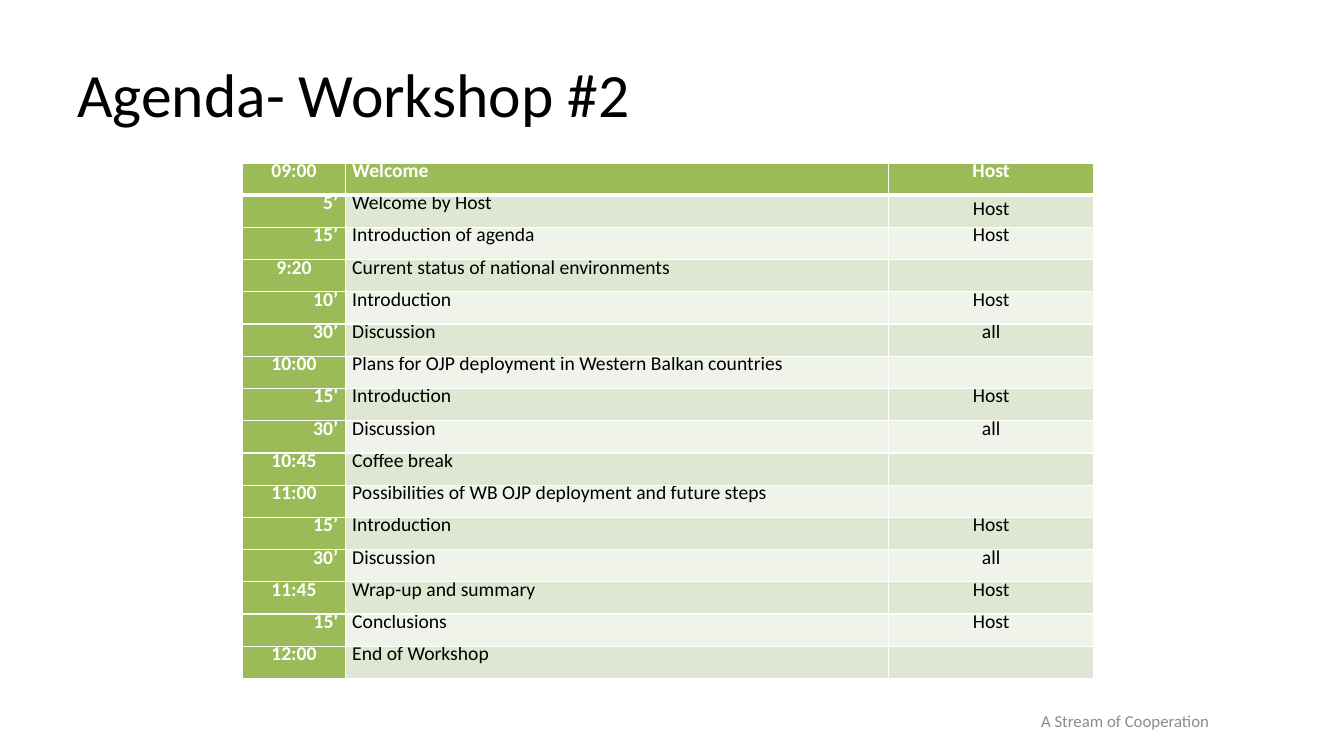
import dataclasses

import lxml.etree
import pptx
import pptx.dml.color
import pptx.enum.text
import pptx.oxml.ns
import pptx.presentation
import pptx.slide
import pptx.table
import pptx.text.text
import pptx.util

GRID_COLUMNS, GRID_ROWS = 160, 90
UNIT_POINTS = 6
FONT = "Calibri"
COLORS = {
    "white": "FFFFFF",
    "black": "000000",
    "grey": "8C8C8C",
    "green": "9BBB59",
    "dark_band": "DEE7D1",
    "light_band": "EFF3EA",
}
ALIGN = pptx.enum.text.PP_ALIGN
ANCHOR = pptx.enum.text.MSO_ANCHOR


@dataclasses.dataclass(frozen=True)
class Area:
    column: float
    row: float
    width: float
    height: float

    def lengths(self) -> list[pptx.util.Length]:
        return [grid(value) for value in dataclasses.astuple(self)]


@dataclasses.dataclass(frozen=True)
class AgendaItem:
    time: str
    topic: str
    speaker: str = ""


TITLE_AREA = Area(8, 3.6, 122, 15)
FOOTER_AREA = Area(115.3, 84, 37.3, 3.6)
TABLE_COLUMN, TABLE_ROW = 28.9, 19.4
COLUMN_WIDTHS = (12.2, 64.7, 24.4)
ROW_HEIGHT = 3.84

AGENDA = [
    AgendaItem("09:00", "Welcome", "Host"),
    AgendaItem("5’", "Welcome by Host", "Host"),
    AgendaItem("15’", "Introduction of agenda", "Host"),
    AgendaItem("9:20", "Current status of national environments"),
    AgendaItem("10’", "Introduction", "Host"),
    AgendaItem("30’", "Discussion", "all"),
    AgendaItem("10:00", "Plans for OJP deployment in Western Balkan countries"),
    AgendaItem("15'", "Introduction", "Host"),
    AgendaItem("30’", "Discussion", "all"),
    AgendaItem("10:45", "Coffee break"),
    AgendaItem("11:00", "Possibilities of WB OJP deployment and future steps"),
    AgendaItem("15’", "Introduction", "Host"),
    AgendaItem("30’", "Discussion", "all"),
    AgendaItem("11:45", "Wrap-up and summary", "Host"),
    AgendaItem("15'", "Conclusions", "Host"),
    AgendaItem("12:00", "End of Workshop"),
]


def grid(units: float) -> pptx.util.Length:
    return pptx.util.Pt(units * UNIT_POINTS)


def rgb(name: str) -> pptx.dml.color.RGBColor:
    return pptx.dml.color.RGBColor.from_string(COLORS[name])


def write_text(
    frame: pptx.text.text.TextFrame,
    text: str,
    *,
    size: float,
    color: str,
    bold: bool = False,
    align: ALIGN = ALIGN.LEFT,
    line_points: float | None = None,
) -> None:
    paragraph = frame.paragraphs[0]
    paragraph.alignment = align
    if line_points:
        paragraph.line_spacing = pptx.util.Pt(line_points)
    if not text:
        return
    run = paragraph.add_run()
    run.text = text
    run.font.name = FONT
    run.font.size = pptx.util.Pt(size)
    run.font.bold = bold
    run.font.color.rgb = rgb(color)


def add_text_box(
    slide: pptx.slide.Slide, area: Area, anchor: ANCHOR
) -> pptx.text.text.TextFrame:
    frame = slide.shapes.add_textbox(*area.lengths()).text_frame
    frame.word_wrap = True
    frame.vertical_anchor = anchor
    return frame


def set_borders(cell: pptx.table._Cell, widths: dict[str, float]) -> None:
    properties = cell._tc.get_or_add_tcPr()
    qualify = pptx.oxml.ns.qn
    for position, (side, width) in enumerate(widths.items()):
        line = lxml.etree.Element(
            qualify(f"a:ln{side}"), w=str(pptx.util.Pt(width))
        )
        fill = lxml.etree.SubElement(line, qualify("a:solidFill"))
        lxml.etree.SubElement(fill, qualify("a:srgbClr"), val=COLORS["white"])
        properties.insert(position, line)


def fill_cell(cell: pptx.table._Cell, text: str, row: int, column: int) -> None:
    is_heading = row == 0 or column == 0
    band = "dark_band" if row % 2 else "light_band"
    align = (ALIGN.CENTER, ALIGN.LEFT, ALIGN.CENTER)[column]
    if column == 0 and ":" not in text:
        align = ALIGN.RIGHT
    cell.margin_left = cell.margin_right = pptx.util.Inches(0.07)
    cell.margin_top = cell.margin_bottom = 0
    cell.vertical_anchor = ANCHOR.MIDDLE if (row, column) == (1, 2) else ANCHOR.TOP
    cell.fill.solid()
    cell.fill.fore_color.rgb = rgb("green" if is_heading else band)
    set_borders(
        cell,
        {"L": 1, "R": 1, "T": 3 if row == 1 else 1, "B": 3 if row == 0 else 1},
    )
    write_text(
        cell.text_frame,
        text,
        size=14,
        color="white" if is_heading else "black",
        bold=is_heading,
        align=align,
        line_points=14,
    )


def add_agenda(slide: pptx.slide.Slide, items: list[AgendaItem]) -> None:
    area = Area(
        TABLE_COLUMN, TABLE_ROW, sum(COLUMN_WIDTHS), ROW_HEIGHT * len(items)
    )
    table = slide.shapes.add_table(
        len(items), len(COLUMN_WIDTHS), *area.lengths()
    ).table
    for table_column, width in zip(table.columns, COLUMN_WIDTHS):
        table_column.width = grid(width)
    for row, item in enumerate(items):
        table.rows[row].height = grid(ROW_HEIGHT)
        for column, text in enumerate(dataclasses.astuple(item)):
            fill_cell(table.cell(row, column), text, row, column)


def build_slide(presentation: pptx.presentation.Presentation) -> None:
    slide = presentation.slides.add_slide(presentation.slide_layouts[6])
    footer = add_text_box(slide, FOOTER_AREA, ANCHOR.TOP)
    write_text(
        footer, "A Stream of Cooperation", size=12, color="grey", align=ALIGN.CENTER
    )
    title = add_text_box(slide, TITLE_AREA, ANCHOR.MIDDLE)
    write_text(title, "Agenda- Workshop #2", size=44, color="black")
    add_agenda(slide, AGENDA)


def main() -> None:
    presentation = pptx.Presentation()
    presentation.slide_width = grid(GRID_COLUMNS)
    presentation.slide_height = grid(GRID_ROWS)
    build_slide(presentation)
    presentation.save("out.pptx")


if __name__ == "__main__":
    main()
